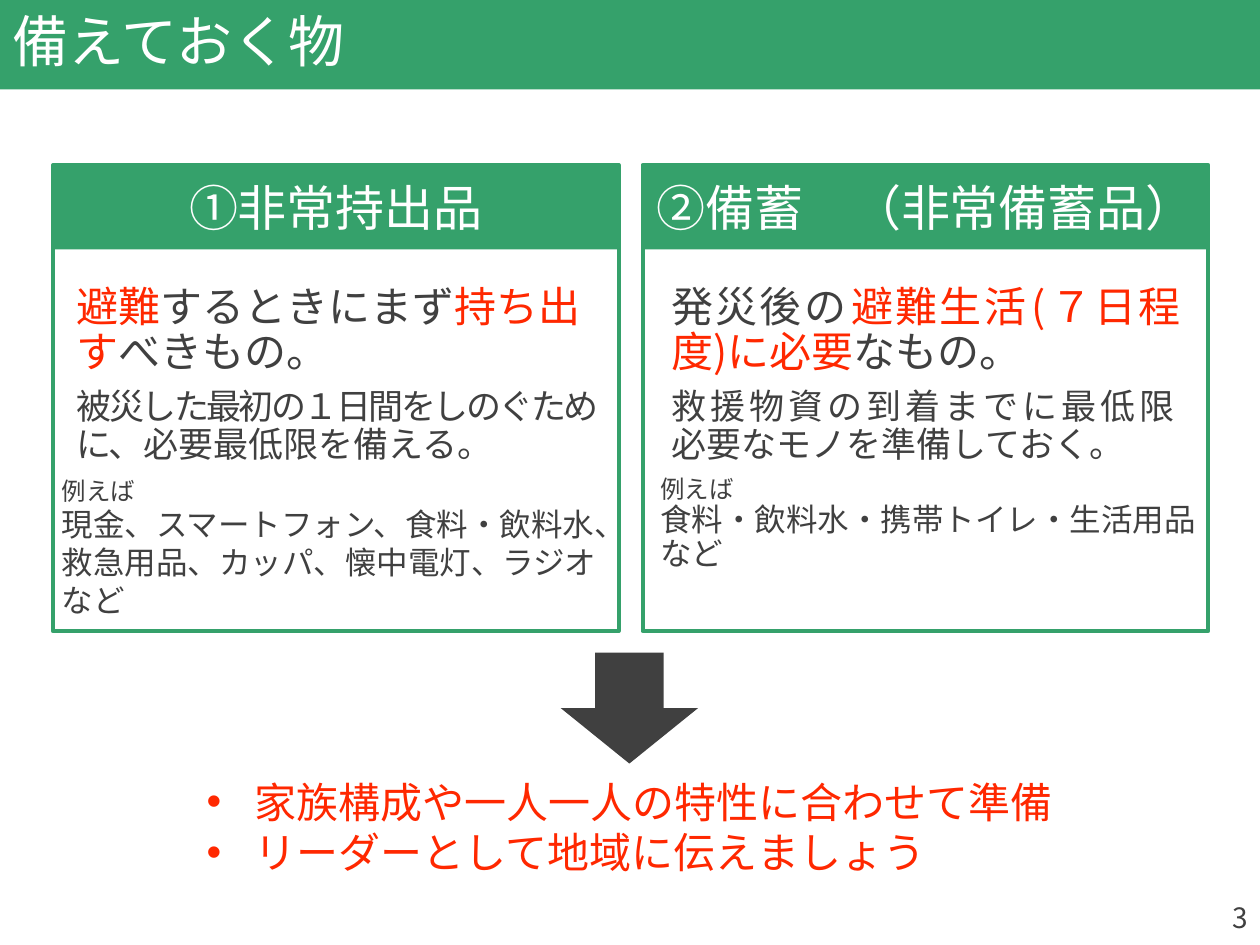
import pptx
import pptx.util
import pptx.dml.color
import pptx.enum.shapes
import pptx.enum.text
import pptx.oxml.ns
import lxml.etree

Inches = pptx.util.Inches
Pt = pptx.util.Pt
ALIGN = pptx.enum.text.PP_ALIGN
ANCHOR = pptx.enum.text.MSO_ANCHOR
SHAPE = pptx.enum.shapes.MSO_SHAPE
FONT = "Noto Sans CJK JP"
GREEN, RED, DARK, WHITE = "35A16B", "FF2800", "404040", "FFFFFF"


def color(value):
    """Turn a hex string into a colour."""
    return pptx.dml.color.RGBColor.from_string(value)


def add_run(p, text, size, fill=DARK, spacing=0):
    """Add one formatted run to a paragraph."""
    r = p.add_run()
    r.text = text
    r.font.size = Pt(size)
    r.font.name = FONT
    r.font.color.rgb = color(fill)
    rPr = r.font._element
    if spacing:
        rPr.set("spc", str(int(spacing * 100)))
    ea = lxml.etree.Element(pptx.oxml.ns.qn("a:ea"), typeface=FONT)
    rPr.find(pptx.oxml.ns.qn("a:latin")).addnext(ea)


def add_text(tf, runs, size, first=False, fill=DARK, align=ALIGN.LEFT,
             line=1.0, before=0):
    """Write a paragraph of (text, fill, spacing) runs, or one plain string."""
    p = tf.paragraphs[0] if first else tf.add_paragraph()
    p.alignment, p.line_spacing, p.space_before = align, line, Pt(before)
    if isinstance(runs, str):
        runs = [(runs, fill, 0)]
    for text, run_fill, spacing in runs:
        for i, part in enumerate(text.split("\n")):
            if i:
                p.add_line_break()
            add_run(p, part, size, run_fill, spacing)
    return p


def set_frame(sp, box, anchor=ANCHOR.TOP, wrap=True):
    """Place a shape and prepare its text frame."""
    sp.left, sp.top, sp.width, sp.height = (Inches(v) for v in box)
    tf = sp.text_frame
    tf.auto_size = pptx.enum.text.MSO_AUTO_SIZE.NONE
    tf.word_wrap, tf.vertical_anchor = wrap, anchor
    return tf


def add_box(s, box, anchor=ANCHOR.TOP):
    """Add a text box and return its text frame."""
    return set_frame(s.shapes.add_textbox(0, 0, 0, 0), box, anchor)


def add_shape(s, kind, box, fill=None, line=None):
    """Add a preset shape with a flat fill or an outline."""
    sp = s.shapes.add_shape(kind, *(Inches(v) for v in box))
    sp.shadow.inherit = False
    if fill:
        sp.fill.solid()
        sp.fill.fore_color.rgb = color(fill)
    else:
        sp.fill.background()
    if line:
        sp.line.color.rgb = color(line)
        sp.line.width = Pt(2.25)
    else:
        sp.line.fill.background()
    return sp


def add_title(s, box, text):
    """Turn the title placeholder into the green heading band."""
    sp = s.shapes.title
    tf = set_frame(sp, box, ANCHOR.MIDDLE)
    sp.fill.solid()
    sp.fill.fore_color.rgb = color(GREEN)
    add_text(tf, text, 32, first=True, fill=WHITE, line=0.9)


def add_card(s, box, heading, lead, detail, examples, lead_box, example_box,
             align, example_line):
    """Draw a framed card; the inner boxes are relative to its corner."""
    x, y, w, h = box
    add_shape(s, SHAPE.RECTANGLE, box, line=GREEN)
    header_box = (x, y, w, 0.67)
    header = add_shape(s, SHAPE.RECTANGLE, header_box, fill=GREEN)
    add_text(set_frame(header, header_box, ANCHOR.MIDDLE), heading, 28,
             first=True, fill=WHITE, align=ALIGN.CENTER)

    dx, dy, tw, th = lead_box
    tf = add_box(s, (x + dx, y + dy, tw, th))
    add_text(tf, lead, 24, first=True, align=align, line=0.9, before=7.5)
    add_text(tf, detail, 20, align=align, line=0.9, before=7.5)

    dx, dy, tw, th = example_box
    tf = add_box(s, (x + dx, y + dy, tw, th), ANCHOR.MIDDLE)
    add_text(tf, "例えば", 14, first=True, line=example_line, before=7.5)
    add_text(tf, examples, 18, line=example_line)


def add_conclusion(s, box, items):
    """Fill the body placeholder with the red closing bullets."""
    tf = set_frame(s.placeholders[1], box, wrap=False)
    for i, item in enumerate(items):
        p = add_text(tf, item, 24, first=i == 0, fill=RED)
        pPr = p._p.get_or_add_pPr()
        pPr.set("marL", str(Inches(0.38)))
        pPr.set("indent", str(-Inches(0.38)))
        bullet = pptx.oxml.ns.qn("a:buChar")
        lxml.etree.SubElement(pPr, bullet, char="•")


def main():
    """Build and save the slide."""
    prs = pptx.Presentation()
    prs.slide_width, prs.slide_height = Inches(10), Inches(7.5)
    s = prs.slides.add_slide(prs.slide_layouts[1])
    add_title(s, (0, 0, 10, 0.71), "備えておく物")
    add_text(add_box(s, (7.75, 7.1, 2.25, 0.4)), "3", 16, first=True,
             align=ALIGN.RIGHT)
    add_card(
        s, (0.42, 1.31, 4.49, 3.7), "①非常持出品",
        [("避難", RED, 0), ("するときにまず", DARK, 0),
         ("持ち出す", RED, 0), ("べきもの。", DARK, 0)],
        [("被災した最初の１日間をしのぐために、", DARK, -1.5),
         ("必要最低限を備える。", DARK, 0)],
        "現金、スマートフォン、食料・飲料水、救急用品、カッパ、懐中電灯、ラジオなど",
        (0.09, 0.91, 4.49, 1.26), (-0.03, 2.58, 4.59, 0.91), ALIGN.LEFT, 1.0)
    add_card(
        s, (5.1, 1.31, 4.49, 3.7), "②備蓄　（非常備蓄品）",
        [("発災後の", DARK, -1.5), ("避難生活(７日程度)", RED, -1.5),
         ("に必要", RED, 0), ("なもの。", DARK, 0)],
        "救援物資の到着までに最低限\n必要なモノを準備しておく。",
        "食料・飲料水・携帯トイレ・生活用品など",
        (0.13, 0.91, 4.22, 1.66), (0.04, 2.4, 4.45, 0.91), ALIGN.JUSTIFY, 0.9)
    add_shape(s, SHAPE.DOWN_ARROW, (4.45, 5.18, 1.09, 0.88), fill=DARK)
    add_conclusion(s, (1.54, 6.11, 6.92, 0.91),
                   ["家族構成や一人一人の特性に合わせて準備",
                    "リーダーとして地域に伝えましょう"])
    prs.save("out.pptx")


if __name__ == "__main__":
    main()
